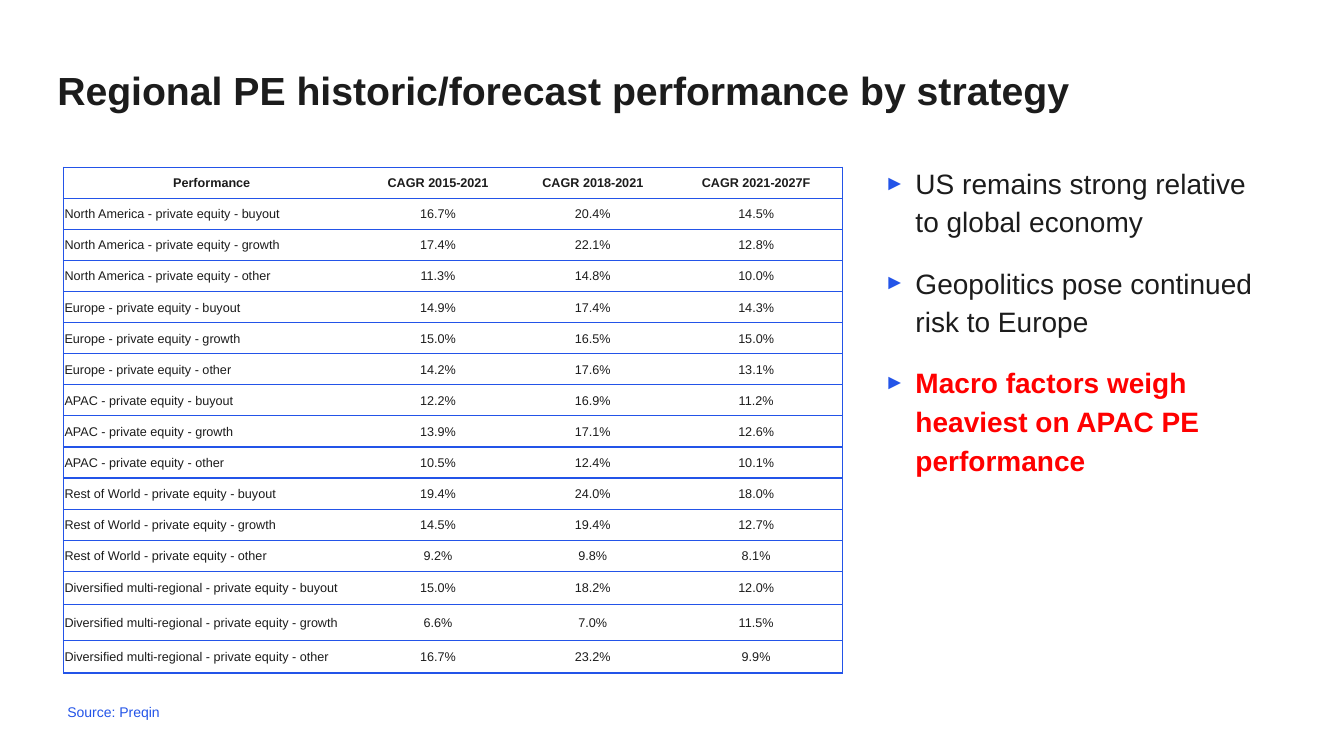
from lxml import etree
from pptx import Presentation
from pptx import util as u
from pptx.dml.color import RGBColor
from pptx.enum import text
from pptx.oxml.ns import qn

COLORS = {"ink": "1C1C1C", "blue": "2354E8", "red": "FF0000", "white": "FFFFFF"}
FONT = "Arial"

HEADINGS = ["Performance", "CAGR 2015-2021", "CAGR 2018-2021", "CAGR 2021-2027F"]
STRATEGIES = ["buyout", "growth", "other"]
RETURNS = {
    "North America": ["16.7% 20.4% 14.5%", "17.4% 22.1% 12.8%", "11.3% 14.8% 10.0%"],
    "Europe": ["14.9% 17.4% 14.3%", "15.0% 16.5% 15.0%", "14.2% 17.6% 13.1%"],
    "APAC": ["12.2% 16.9% 11.2%", "13.9% 17.1% 12.6%", "10.5% 12.4% 10.1%"],
    "Rest of World": ["19.4% 24.0% 18.0%", "14.5% 19.4% 12.7%", "9.2% 9.8% 8.1%"],
    "Diversified multi-regional": ["15.0% 18.2% 12.0%", "6.6% 7.0% 11.5%", "16.7% 23.2% 9.9%"],
}
COLUMN_WIDTHS = [2.94, 1.55, 1.52, 1.72]
ROW_HEIGHTS = [4.01 / 13] * 13 + [0.33, 0.36, 0.32]
TAKEAWAYS = [
    ("US remains strong relative to global economy", "ink", False),
    ("Geopolitics pose continued risk to Europe", "ink", False),
    ("Macro factors weigh heaviest on APAC PE performance", "red", True),
]


def style(para, size, color, bold=False):
    para.font.name = FONT
    para.font.size = u.Pt(size)
    para.font.bold = bold
    para.font.color.rgb = RGBColor.from_string(COLORS[color])


def add_frame(page, place, insets=(0.1, 0.05, 0.1, 0.05)):
    frame = page.shapes.add_textbox(*map(u.Inches, place)).text_frame
    frame.word_wrap = True
    frame.margin_left, frame.margin_top, frame.margin_right, frame.margin_bottom = map(
        u.Inches, insets)
    return frame


def add_line(page, place, wording, size, color, bold=False, top_inset=0.05):
    frame = add_frame(page, place, (0.1, top_inset, 0.1, 0.05))
    frame.text = wording
    style(frame.paragraphs[0], size, color, bold)


def add_border(cell, side, visible):
    line = etree.SubElement(cell._tc.get_or_add_tcPr(), qn(f"a:ln{side}"), w=str(u.Pt(1)))
    if visible:
        fill = etree.SubElement(line, qn("a:solidFill"))
        etree.SubElement(fill, qn("a:srgbClr"), val=COLORS["blue"])
    else:
        etree.SubElement(line, qn("a:noFill"))


def fill_cell(cell, wording, row, column):
    cell.margin_left = cell.margin_top = cell.margin_right = u.Inches(0.01)
    cell.margin_bottom = 0
    cell.vertical_anchor = text.MSO_ANCHOR.MIDDLE
    edges = {"L": column == 0, "R": column == len(HEADINGS) - 1, "T": True, "B": True}
    for side, visible in edges.items():
        add_border(cell, side, visible)
    cell.fill.solid()
    cell.fill.fore_color.rgb = RGBColor.from_string(COLORS["white"])
    cell.text = wording
    para = cell.text_frame.paragraphs[0]
    centred = row == 0 or column > 0
    para.alignment = text.PP_ALIGN.CENTER if centred else text.PP_ALIGN.LEFT
    style(para, 9, "ink", row == 0)


def add_returns_table(page, left, top):
    rows = [HEADINGS] + [
        [f"{region} - private equity - {strategy}", *values.split()]
        for region, lines in RETURNS.items()
        for strategy, values in zip(STRATEGIES, lines)
    ]
    place = map(u.Inches, (left, top, sum(COLUMN_WIDTHS), sum(ROW_HEIGHTS)))
    table = page.shapes.add_table(len(rows), len(HEADINGS), *place).table
    table.first_row = table.horz_banding = False
    for column, width in zip(table.columns, COLUMN_WIDTHS):
        column.width = u.Inches(width)
    for row, height in zip(table.rows, ROW_HEIGHTS):
        row.height = u.Inches(height)
    for r, wordings in enumerate(rows):
        for c, wording in enumerate(wordings):
            fill_cell(table.cell(r, c), wording, r, c)


def add_bullet(para):
    properties = para._p.get_or_add_pPr()
    properties.set("marL", str(u.Inches(0.31)))
    properties.set("indent", str(-u.Inches(0.31)))
    color = etree.SubElement(properties, qn("a:buClr"))
    etree.SubElement(color, qn("a:srgbClr"), val=COLORS["blue"])
    etree.SubElement(properties, qn("a:buSzPct"), val="75000")
    etree.SubElement(properties, qn("a:buFont"), typeface=FONT)
    etree.SubElement(properties, qn("a:buChar"), char="►")


def add_takeaways(page, place):
    frame = add_frame(page, place, (0.09, 0.04, 0.09, 0.04))
    for index, (wording, color, bold) in enumerate(TAKEAWAYS):
        para = frame.add_paragraph() if index else frame.paragraphs[0]
        para.text = wording
        add_bullet(para)
        para.line_spacing = 1.15
        if index:
            para.space_before = u.Pt(16)
        style(para, 20, color, bold)


def main():
    deck = Presentation()
    deck.slide_width, deck.slide_height = u.Inches(13.33), u.Inches(7.5)
    page = deck.slides.add_slide(deck.slide_layouts[6])
    add_line(page, (0.57, 6.93, 9.22, 0.34), "Source: Preqin", 10, "blue")
    add_line(page, (0.47, 0.57, 10.34, 0.21),
             "Regional PE historic/forecast performance by strategy", 28, "ink", True, 0.09)
    add_takeaways(page, (8.68, 1.56, 4.02, 4.01))
    add_returns_table(page, 0.63, 1.66)
    deck.save("out.pptx")


if __name__ == "__main__":
    main()
